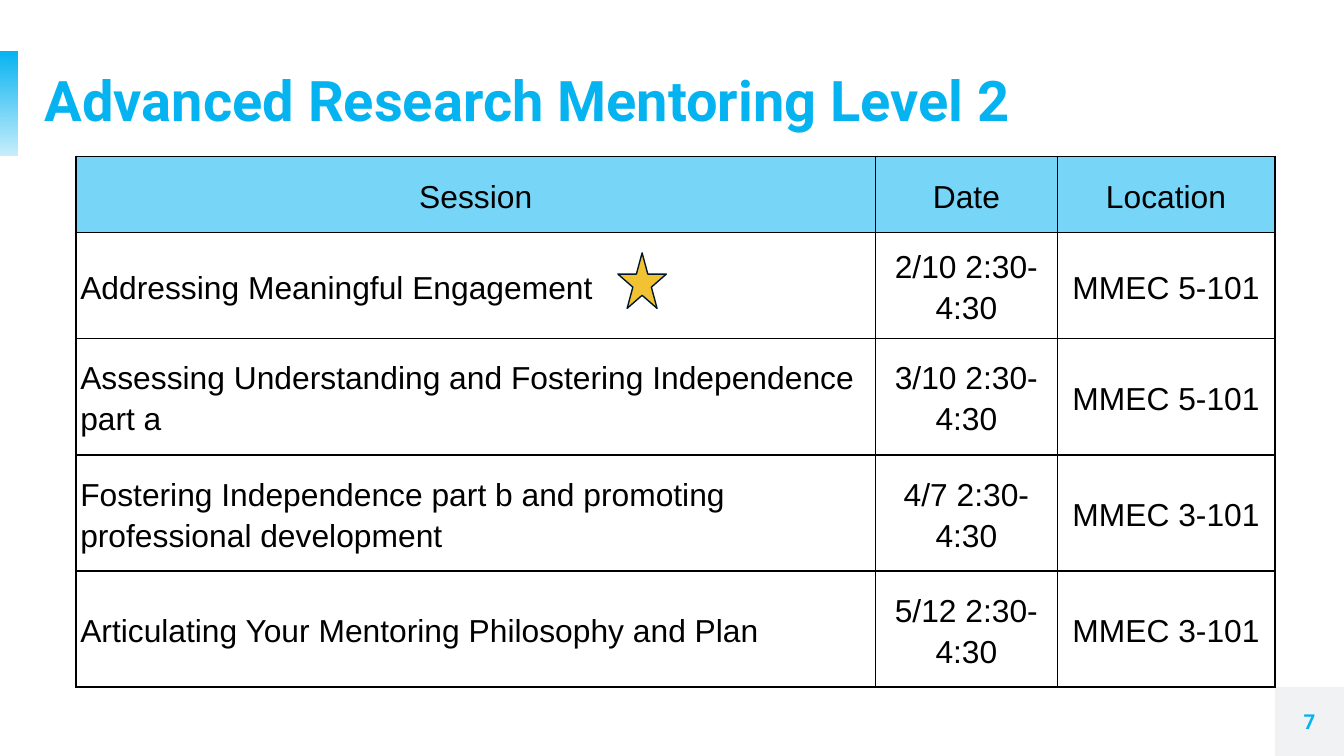
import pptx
import pptx.dml.color
import pptx.enum.shapes
import pptx.enum.text
import pptx.oxml.ns
import pptx.util
from lxml import etree

Pt = pptx.util.Pt
Shape = pptx.enum.shapes.MSO_SHAPE
Align = pptx.enum.text.PP_ALIGN
Anchor = pptx.enum.text.MSO_ANCHOR
qn = pptx.oxml.ns.qn

BLUE = "05B3F1"
BLACK = "000000"


def color(hex_code):
    return pptx.dml.color.RGBColor.from_string(hex_code)


def set_alpha(element, percent):
    """Make every RGB colour inside the element partly transparent."""
    for rgb in element.iter(qn("a:srgbClr")):
        etree.SubElement(rgb, qn("a:alpha"), val=str(percent * 1000))


class SlideBuilder:
    heading_font = "Roboto"
    body_font = "Arial"
    body_size = 17
    border_width = 0.9

    def __init__(self, slide):
        self.slide = slide

    def shape(self, kind, box, fill=None, line=None, line_width=0.75):
        item = self.slide.shapes.add_shape(kind, *map(Pt, box))
        item.shadow.inherit = False
        if fill:
            item.fill.solid()
            item.fill.fore_color.rgb = color(fill)
        if line:
            item.line.color.rgb = color(line)
            item.line.width = Pt(line_width)
        else:
            item.line.fill.background()
        return item

    def fading_bar(self, box, hex_code, faint):
        bar = self.shape(Shape.RECTANGLE, box)
        bar.fill.gradient()
        bar.fill.gradient_angle = 90
        for stop in bar.fill.gradient_stops:
            stop.color.rgb = color(hex_code)
        set_alpha(next(bar.element.iter(qn("a:gs"))), faint)

    def format_text(self, paragraph, font, size, hex_code, bold, align, spacing):
        paragraph.alignment = align
        paragraph.line_spacing = spacing
        for run in paragraph.runs:
            run.font.name = font
            run.font.size = Pt(size)
            run.font.bold = bold
            run.font.color.rgb = color(hex_code)

    def heading(self, text, box, size, align=Align.LEFT, spacing=1.0):
        frame = self.slide.shapes.add_textbox(*map(Pt, box)).text_frame
        frame.word_wrap = True
        frame.vertical_anchor = Anchor.MIDDLE
        frame.margin_left = frame.margin_right = 0
        frame.margin_top = frame.margin_bottom = 0
        frame.text = text
        self.format_text(frame.paragraphs[0], self.heading_font, size, BLUE,
                         True, align, spacing)

    def borders(self, cell):
        properties = cell._tc.get_or_add_tcPr()
        for side in ("lnL", "lnR", "lnT", "lnB"):
            edge = etree.SubElement(properties, qn(f"a:{side}"),
                                    w=str(Pt(self.border_width)))
            fill = etree.SubElement(edge, qn("a:solidFill"))
            etree.SubElement(fill, qn("a:srgbClr"), val=BLACK)

    def table(self, rows, left, top, widths, heights):
        frame = self.slide.shapes.add_table(
            len(rows), len(widths), Pt(left), Pt(top),
            Pt(sum(widths)), Pt(sum(heights)))
        grid = frame.table
        grid.first_row = grid.horz_banding = False
        for column, width in zip(grid.columns, widths):
            column.width = Pt(width)
        for row, height in zip(grid.rows, heights):
            row.height = Pt(height)
        for r, texts in enumerate(rows):
            for c, text in enumerate(texts):
                self.cell(grid.cell(r, c), text, header=r == 0,
                          is_session=r > 0 and c == 0)

    def cell(self, cell, text, header, is_session):
        margin = Pt(2.25 if is_session else 5)
        cell.margin_left = cell.margin_right = margin
        cell.margin_top = cell.margin_bottom = margin
        cell.vertical_anchor = Anchor.MIDDLE
        self.borders(cell)
        if header:
            cell.fill.solid()
            cell.fill.fore_color.rgb = color(BLUE)
            set_alpha(cell._tc.tcPr.find(qn("a:solidFill")), 54)
        else:
            cell.fill.background()
        cell.text_frame.text = text
        self.format_text(cell.text_frame.paragraphs[0], self.body_font,
                         self.body_size, BLACK, False,
                         Align.LEFT if is_session else Align.CENTER, 1.15)


def main():
    deck = pptx.Presentation()
    deck.slide_width, deck.slide_height = Pt(720), Pt(405)
    builder = SlideBuilder(deck.slides.add_slide(deck.slide_layouts[6]))

    # Accent bar and page number corner
    page_corner = (683, 368, 37, 37)
    builder.fading_bar((-0.5, 27.5, 10, 56), BLUE, faint=22)
    builder.shape(Shape.RECTANGLE, page_corner, fill="F0F2F3")

    # Title and page number
    builder.heading("Advanced Research Mentoring Level 2",
                    (24, 27.5, 667.5, 56), 30, spacing=0.9)
    builder.heading("7", page_corner, 11, Align.CENTER)

    # Session schedule
    sessions = [
        ("Session", "Date", "Location"),
        ("Addressing Meaningful Engagement", "2/10 2:30-4:30", "MMEC 5-101"),
        ("Assessing Understanding and Fostering Independence part a",
         "3/10 2:30-4:30", "MMEC 5-101"),
        ("Fostering Independence part b and promoting professional development",
         "4/7 2:30-4:30", "MMEC 3-101"),
        ("Articulating Your Mentoring Philosophy and Plan",
         "5/12 2:30-4:30", "MMEC 3-101"),
    ]
    builder.table(sessions, 40.75, 83.75, widths=(428.25, 97.5, 116.5),
                  heights=(40.75, 40.5, 62.25, 62.25, 62.25))

    # Star marking the first session
    builder.shape(Shape.STAR_5_POINT, (331, 135.5, 26, 29.75),
                  fill="F1C232", line="00162A")

    deck.save("out.pptx")


if __name__ == "__main__":
    main()
